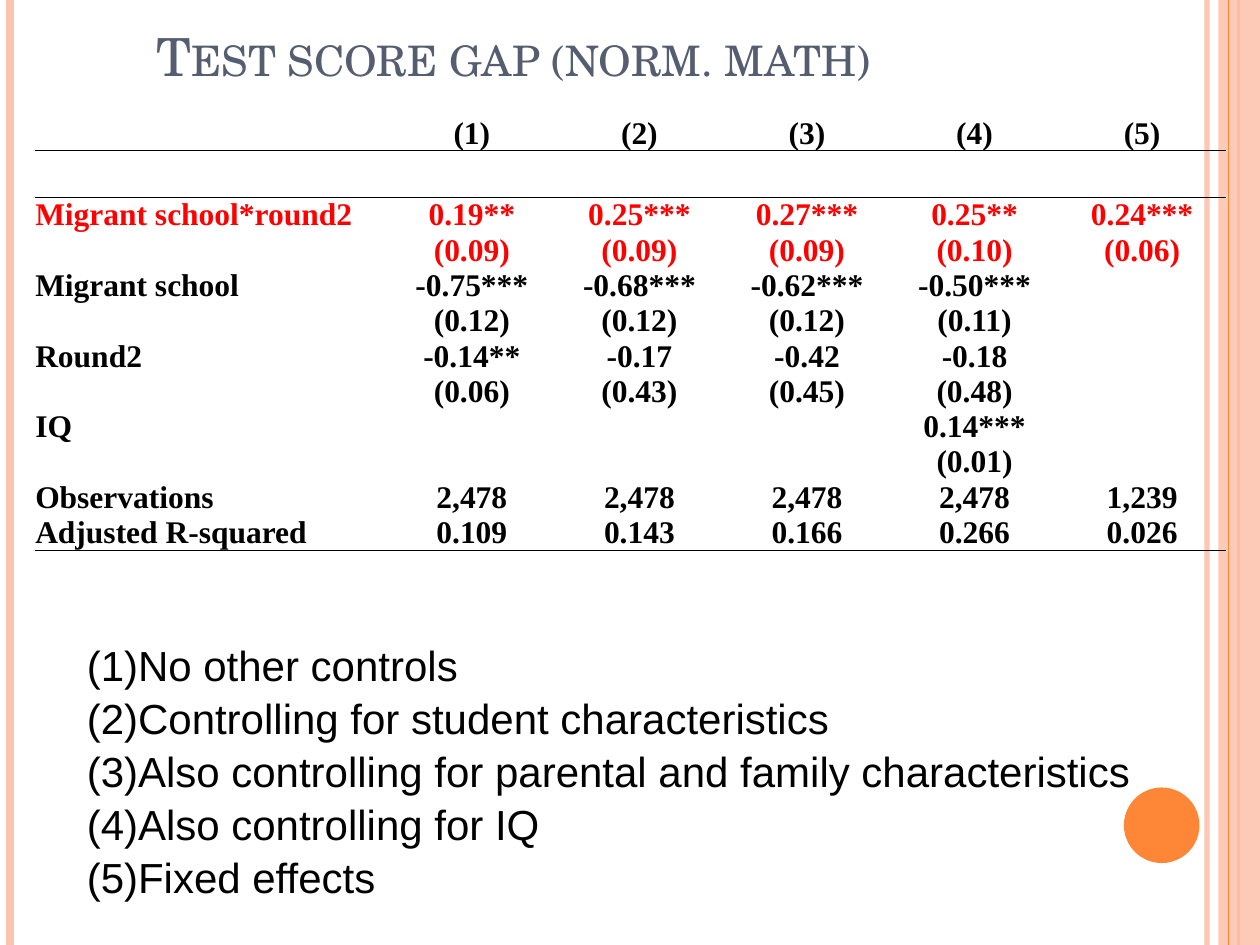
from lxml.etree import SubElement
from pptx import Presentation
from pptx.dml.color import RGBColor
from pptx.enum.shapes import MSO_CONNECTOR, MSO_SHAPE as SHAPE
from pptx.enum.text import MSO_ANCHOR as ANCHOR, PP_ALIGN as ALIGN
from pptx.oxml.ns import qn
from pptx.util import Inches, Pt

WIDTH, HEIGHT = 10, 7.5
COLORS = {"pale": "FEC3AE", "orange": "FE8637", "title": "545E70",
          "text": "000000", "key": "FF0000"}
NO_STYLE = "{2D5ABB26-0587-4C30-8999-92F81FD0307C}"
KEY_ROWS = (2, 3)
RESULTS = [
    ["", "(1)", "(2)", "(3)", "(4)", "(5)"],
    [""] * 6,
    ["Migrant school*round2", "0.19**", "0.25***", "0.27***", "0.25**", "0.24***"],
    ["", "(0.09)", "(0.09)", "(0.09)", "(0.10)", "(0.06)"],
    ["Migrant school", "-0.75***", "-0.68***", "-0.62***", "-0.50***", ""],
    ["", "(0.12)", "(0.12)", "(0.12)", "(0.11)", ""],
    ["Round2", "-0.14**", "-0.17", "-0.42", "-0.18", ""],
    ["", "(0.06)", "(0.43)", "(0.45)", "(0.48)", ""],
    ["IQ", "", "", "", "0.14***", ""],
    ["", "", "", "", "(0.01)", ""],
    ["Observations", "2,478", "2,478", "2,478", "2,478", "1,239"],
    ["Adjusted R-squared", "0.109", "0.143", "0.166", "0.266", "0.026"],
]
CONTROLS = [
    "No other controls",
    "Controlling for student characteristics",
    "Also controlling for parental and family characteristics",
    "Also controlling for IQ",
    "Fixed effects",
]


def rgb(name):
    return RGBColor.from_string(COLORS[name])


def set_font(p, name, size, color, bold=False):
    p.font.name, p.font.size, p.font.bold = name, Pt(size), bold
    p.font.color.rgb = rgb(color)


def set_alpha(element, percent):
    color = element.find(".//" + qn("a:srgbClr"))
    SubElement(color, qn("a:alpha"), val=str(percent * 1000))


def add_stripe(s, x, color, width, alpha=100):
    line = s.shapes.add_connector(MSO_CONNECTOR.STRAIGHT, Inches(x), 0,
                                  Inches(x), Inches(HEIGHT))
    line.line.color.rgb = rgb(color)
    line.line.width = Pt(width)
    SubElement(line._element.spPr, qn("a:effectLst"))
    if alpha < 100:
        set_alpha(line._element.spPr, alpha)


def add_block(s, kind, x, y, w, h, color, alpha=100):
    sp = s.shapes.add_shape(kind, *map(Inches, (x, y, w, h)))
    sp.shadow.inherit = False
    sp.fill.solid()
    sp.fill.fore_color.rgb = rgb(color)
    sp.line.fill.background()
    if alpha < 100:
        set_alpha(sp._element.spPr, alpha)


def add_decoration(s):
    add_stripe(s, 9.58, "pale", 3, 93)
    add_stripe(s, 0.08, "pale", 4.5)
    add_stripe(s, 9.83, "orange", 1.5)
    add_block(s, SHAPE.RECTANGLE, 9.67, 0, 0.33, HEIGHT, "pale", 87)
    add_stripe(s, 9.75, "orange", 0.75)
    add_block(s, SHAPE.OVAL, 8.92, 6.25, 0.6, 0.6, "orange")


def format_title(title, text):
    title.left, title.top = Inches(1.14), Inches(0.13)
    title.width, title.height = Inches(8.2), Inches(0.61)
    tf = title.text_frame
    tf.text = text
    tf.vertical_anchor = ANCHOR.BOTTOM
    p = tf.paragraphs[0]
    p.alignment = ALIGN.LEFT
    set_font(p, "TeX Gyre Schola", 30, "title")
    p.runs[0].font._rPr.set("cap", "small")


def add_rule(cell, side):
    # Borders come before the fill inside the cell properties
    tc_pr = cell._tc.get_or_add_tcPr()
    ln = SubElement(tc_pr, qn("a:" + side), w=str(Pt(0.5)))
    fill = SubElement(ln, qn("a:solidFill"))
    SubElement(fill, qn("a:srgbClr"), val=COLORS["text"])
    tc_pr.insert(0, ln)


def fill_cell(cell, text, color, align):
    cell.margin_left = cell.margin_right = 0
    cell.margin_top = cell.margin_bottom = 0
    cell.vertical_anchor = ANCHOR.BOTTOM
    cell.fill.background()
    p = cell.text_frame.paragraphs[0]
    if text:
        p.text = text
        p.alignment = align
        set_font(p, "Times New Roman", 18, color, bold=True)
    else:
        # A small empty line keeps the row from growing
        SubElement(p._p, qn("a:endParaRPr"), sz="1000")


def add_results(s):
    widths = [2.8] + [1.33] * 5
    heights = [0.27, 0.37] + [0.28] * 10
    frame = s.shapes.add_table(len(heights), len(widths), Inches(0.28), Inches(0.92),
                               Inches(sum(widths)), Inches(sum(heights)))
    table = frame.table
    table.first_row = table.horz_banding = False
    table._tbl.tblPr.find(qn("a:tableStyleId")).text = NO_STYLE
    for column, w in zip(table.columns, widths):
        column.width = Inches(w)
    rules = {0: "lnB", 1: "lnT", len(RESULTS) - 1: "lnB"}
    for i, values in enumerate(RESULTS):
        table.rows[i].height = Inches(heights[i])
        for j, text in enumerate(values):
            cell = table.cell(i, j)
            fill_cell(cell, text, "key" if i in KEY_ROWS else "text",
                      ALIGN.CENTER if j else ALIGN.LEFT)
            if i in rules:
                add_rule(cell, rules[i])


def add_numbered_list(s, items):
    box = s.shapes.add_textbox(*map(Inches, (0.59, 5.01, 8.98, 2.12)))
    tf = box.text_frame
    tf.word_wrap = True
    for i, text in enumerate(items):
        p = tf.paragraphs[0] if i == 0 else tf.add_paragraph()
        p.text = text
        p.line_spacing = 1.05
        p_pr = p._p.get_or_add_pPr()
        p_pr.set("marL", str(Inches(0.38)))
        p_pr.set("indent", str(Inches(-0.38)))
        SubElement(p_pr, qn("a:buAutoNum"), type="arabicParenBoth")
        set_font(p, "Arial", 24, "text")


def main():
    prs = Presentation()
    prs.slide_width, prs.slide_height = Inches(WIDTH), Inches(HEIGHT)
    s = prs.slides.add_slide(prs.slide_layouts[5])
    add_decoration(s)
    format_title(s.shapes.title, "Test score gap (norm. math)")
    add_results(s)
    add_numbered_list(s, CONTROLS)
    prs.save("out.pptx")


if __name__ == "__main__":
    main()
